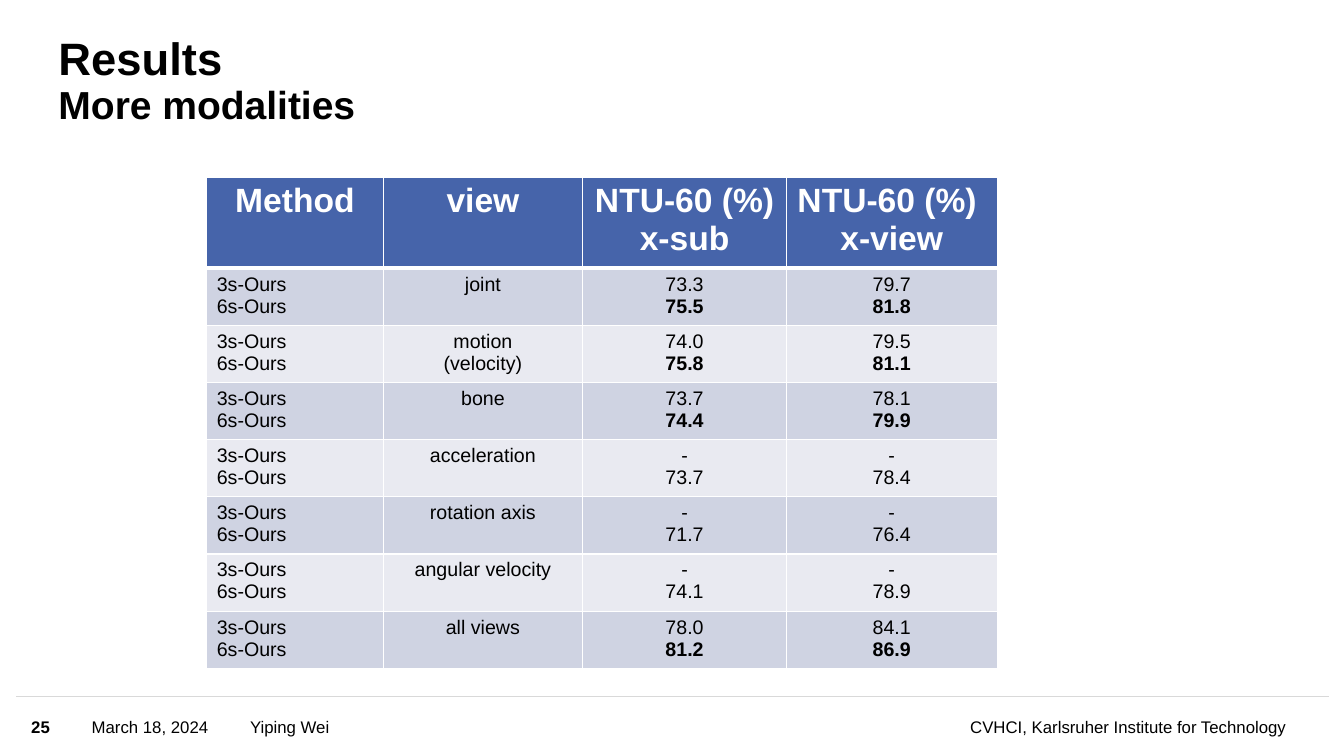
from lxml import etree
from pptx import Presentation
from pptx.dml.color import RGBColor
from pptx.enum.shapes import MSO_CONNECTOR
from pptx.enum.text import MSO_ANCHOR, PP_ALIGN
from pptx.oxml.ns import qn
from pptx.util import Inches, Pt

LEFT, CENTER, RIGHT = PP_ALIGN.LEFT, PP_ALIGN.CENTER, PP_ALIGN.RIGHT
MIDDLE, BOTTOM = MSO_ANCHOR.MIDDLE, MSO_ANCHOR.BOTTOM
STRAIGHT = MSO_CONNECTOR.STRAIGHT

FONT = "Arial"
BLACK, WHITE, RULE_GREY = "000000", "FFFFFF", "D9D9D9"
HEADER_BLUE, BAND_DARK, BAND_LIGHT = "4664AA", "CFD3E2", "E9EAF1"

COLUMN_WIDTHS = [1.75, 1.98, 2.02, 2.09]
HEADER_HEIGHT, ROW_HEIGHT = 0.85, 0.54
HEADERS = [["Method"], ["view"], ["NTU-60 (%) ", "x-sub"], ["NTU-60 (%) ", "x-view"]]
METHODS = ["3s-Ours", "6s-Ours"]
RESULTS = [
    (["joint"], ["73.3", "75.5"], ["79.7", "81.8"]),
    (["motion", "(velocity)"], ["74.0", "75.8"], ["79.5", "81.1"]),
    (["bone"], ["73.7", "74.4"], ["78.1", "79.9"]),
    (["acceleration"], ["-", "73.7"], ["-", "78.4"]),
    (["rotation axis"], ["-", "71.7"], ["-", "76.4"]),
    (["angular velocity"], ["-", "74.1"], ["-", "78.9"]),
    (["all views"], ["78.0", "81.2"], ["84.1", "86.9"]),
]


def color(hex_string):
    return RGBColor.from_string(hex_string)


def add_run(paragraph, text, size, bold=False, ink=BLACK):
    run = paragraph.add_run()
    run.text = text
    run.font.name = FONT
    run.font.size = Pt(size)
    run.font.bold = bold
    run.font.color.rgb = color(ink)


def add_text_box(slide, box, anchor, align=LEFT):
    """Add an empty box without margins and return its first paragraph."""
    frame = slide.shapes.add_textbox(*map(Inches, box)).text_frame
    frame.word_wrap = True
    frame.vertical_anchor = anchor
    frame.margin_left = frame.margin_right = frame.margin_top = frame.margin_bottom = 0
    frame.paragraphs[0].alignment = align
    return frame.paragraphs[0]


def add_title(slide, box):
    paragraph = add_text_box(slide, box, BOTTOM)
    paragraph.line_spacing = 0.9
    add_run(paragraph, "Results", 32.4, True)
    paragraph.add_line_break()
    add_run(paragraph, "More modalities", 27.9, True)


def set_borders(cell, top, bottom):
    properties = cell._tc.get_or_add_tcPr()
    widths = {"a:lnL": 1, "a:lnR": 1, "a:lnT": top, "a:lnB": bottom}
    for position, (tag, width) in enumerate(widths.items()):
        line = etree.Element(qn(tag), w=str(Pt(width)))
        fill = etree.SubElement(line, qn("a:solidFill"))
        etree.SubElement(fill, qn("a:srgbClr"), val=WHITE)
        properties.insert(position, line)


def fill_cell(cell, lines, align, size, ink, bolds, fill):
    cell.fill.solid()
    cell.fill.fore_color.rgb = color(fill)
    frame = cell.text_frame
    for index, (text, bold) in enumerate(zip(lines, bolds)):
        paragraph = frame.add_paragraph() if index else frame.paragraphs[0]
        paragraph.alignment = align
        add_run(paragraph, text, size, bold, ink)


def add_results_table(slide, left, top):
    height = HEADER_HEIGHT + ROW_HEIGHT * len(RESULTS)
    box = (left, top, sum(COLUMN_WIDTHS), height)
    table = slide.shapes.add_table(
        len(RESULTS) + 1, len(COLUMN_WIDTHS), *map(Inches, box)).table
    for column, width in zip(table.columns, COLUMN_WIDTHS):
        column.width = Inches(width)
    for index, row in enumerate(table.rows):
        row.height = Inches(ROW_HEIGHT if index else HEADER_HEIGHT)
        for cell in row.cells:
            set_borders(cell, 3 if index == 1 else 1, 1 if index else 3)

    for column, lines in enumerate(HEADERS):
        fill_cell(table.cell(0, column), lines, CENTER, 24, WHITE, [True] * 2, HEADER_BLUE)
    for row, (view, *scores) in enumerate(RESULTS, start=1):
        band = BAND_DARK if row % 2 else BAND_LIGHT
        for column, lines in enumerate([METHODS, view, *scores]):
            # The six-stream score stands out where a three-stream one exists
            improved = column > 1 and lines[0] != "-"
            fill_cell(table.cell(row, column), lines, CENTER if column else LEFT,
                      14, BLACK, [False, improved], band)


def add_footer(slide, top, height):
    rule = slide.shapes.add_connector(
        STRAIGHT, *map(Inches, (0.16, top, 13.18, top)))
    rule.line.color.rgb = color(RULE_GREY)
    rule.line.width = Pt(1)
    etree.SubElement(rule._element.spPr, qn("a:effectLst"))
    for text, left, width, align, bold in [
        ("25", 0.31, 0.48, LEFT, True),
        ("March 18, 2024", 0.91, 1.5, LEFT, False),
        ("Yiping Wei", 2.48, 5.37, LEFT, False),
        ("CVHCI, Karlsruher Institute for Technology", 8.03, 4.73, RIGHT, False),
    ]:
        paragraph = add_text_box(slide, (left, top + 0.01, width, height), MIDDLE, align)
        add_run(paragraph, text, 12, bold)


def main():
    presentation = Presentation()
    presentation.slide_width = Inches(13.33)
    presentation.slide_height = Inches(7.5)
    slide = presentation.slides.add_slide(presentation.slide_layouts[6])
    add_footer(slide, 6.91, 0.58)
    add_title(slide, (0.58, 0.43, 10.02, 0.84))
    add_results_table(slide, 2.05, 1.76)
    presentation.save("out.pptx")


if __name__ == "__main__":
    main()
